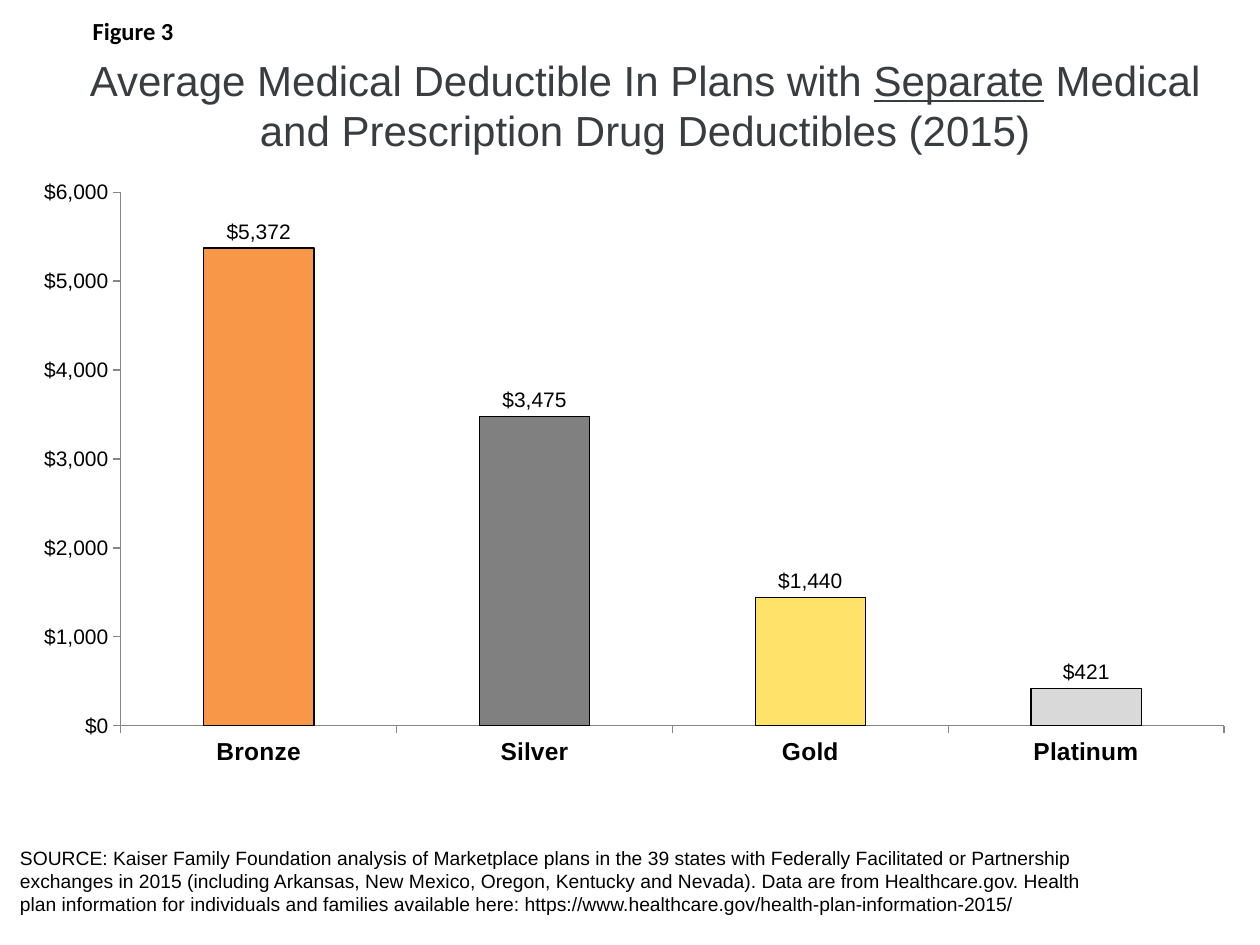
from dataclasses import dataclass

import pptx
import pptx.chart.data
import pptx.dml.color
import pptx.enum.chart
import pptx.enum.text
import pptx.oxml
import pptx.oxml.ns
import pptx.util

Pt = pptx.util.Pt
RGB = pptx.dml.color.RGBColor
ALIGN = pptx.enum.text.PP_ALIGN
ANCHOR = pptx.enum.text.MSO_ANCHOR


@dataclass(frozen=True)
class Theme:
    font: str = "Arial"
    label_font: str = "Calibri"
    text: str = "000000"
    title: str = "393D40"
    axis: str = "868686"
    title_size: float = 24
    figure_size: float = 14
    category_size: float = 14
    value_size: float = 12
    source_size: float = 11


@dataclass(frozen=True)
class Box:
    left: float
    top: float
    width: float
    height: float

    def lengths(self) -> tuple:
        return Pt(self.left), Pt(self.top), Pt(self.width), Pt(self.height)


@dataclass(frozen=True)
class TextBlock:
    box: Box
    runs: tuple[tuple[str, bool], ...]  # text, underlined
    size: float
    color: str
    font: str
    bold: bool = False
    align: ALIGN = ALIGN.CENTER
    anchor: ANCHOR = ANCHOR.TOP


@dataclass(frozen=True)
class MetalTier:
    name: str
    deductible: int
    color: str


THEME = Theme()
DOLLARS = '"$"#,##0'

TIERS = (
    MetalTier("Bronze", 5372, "F79747"),
    MetalTier("Silver", 3475, "808080"),
    MetalTier("Gold", 1440, "FEE26A"),
    MetalTier("Platinum", 421, "D9D9D9"),
)

CHART_BOX = Box(13, 95.8, 700.5, 350.6)
PLOT_SHARES = {"x": 0.08, "y": 0.04, "w": 0.9, "h": 0.87}

TEXTS = (
    TextBlock(
        Box(4.3, 480.2, 632.2, 47.5),
        (("SOURCE: Kaiser Family Foundation analysis of Marketplace plans in the 39 states "
          "with Federally Facilitated or Partnership exchanges in 2015 (including Arkansas, "
          "New Mexico, Oregon, Kentucky and Nevada). Data are from Healthcare.gov. Health "
          "plan information for individuals and families available here: "
          "https://www.healthcare.gov/health-plan-information-2015/", False),),
        THEME.source_size, THEME.text, THEME.font, align=ALIGN.LEFT,
    ),
    TextBlock(
        Box(24.5, 23.8, 688.3, 72),
        (("Average Medical Deductible In Plans with ", False),
         ("Separate", True),
         (" Medical and Prescription Drug Deductibles (2015)", False)),
        THEME.title_size, THEME.title, THEME.font, anchor=ANCHOR.MIDDLE,
    ),
    TextBlock(
        Box(13, 5.8, 126, 24.5),
        (("Figure 3", False),),
        THEME.figure_size, THEME.text, THEME.label_font, bold=True,
    ),
)


def style_font(font, size: float, color: str, name: str, bold: bool = False) -> None:
    font.size = Pt(size)
    font.name = name
    font.bold = bold
    font.color.rgb = RGB.from_string(color)


def add_text(s, block: TextBlock) -> None:
    tf = s.shapes.add_textbox(*block.box.lengths()).text_frame
    tf.word_wrap = True
    tf.vertical_anchor = block.anchor
    p = tf.paragraphs[0]
    p.alignment = block.align
    style_font(p.font, block.size, block.color, block.font, block.bold)
    for text, underlined in block.runs:
        r = p.add_run()
        r.text = text
        if underlined:
            r.font.underline = True


def set_plot_layout(chart, shares: dict[str, float]) -> None:
    """Fix the inner plot area as shares of the chart's width and height."""
    plot_area = chart._chartSpace.chart.plotArea
    for old in plot_area.findall(pptx.oxml.ns.qn("c:layout")):
        plot_area.remove(old)
    values = "".join(f'<c:{k} val="{v}"/>' for k, v in shares.items())
    plot_area.insert(0, pptx.oxml.parse_xml(
        f'<c:layout {pptx.oxml.ns.nsdecls("c")}><c:manualLayout>'
        '<c:layoutTarget val="inner"/><c:xMode val="edge"/><c:yMode val="edge"/>'
        f"{values}</c:manualLayout></c:layout>"))


def style_axis(axis, size: float, bold: bool = False) -> None:
    axis.has_major_gridlines = False
    axis.major_tick_mark = pptx.enum.chart.XL_TICK_MARK.OUTSIDE
    axis.minor_tick_mark = pptx.enum.chart.XL_TICK_MARK.NONE
    axis.format.line.color.rgb = RGB.from_string(THEME.axis)
    axis.format.line.width = Pt(0.75)
    style_font(axis.tick_labels.font, size, THEME.text, THEME.font, bold)


def add_deductible_chart(s, box: Box, tiers: tuple[MetalTier, ...]) -> None:
    data = pptx.chart.data.CategoryChartData()
    data.categories = [t.name for t in tiers]
    data.add_series("Series 1", [t.deductible for t in tiers])
    chart = s.shapes.add_chart(
        pptx.enum.chart.XL_CHART_TYPE.COLUMN_CLUSTERED, *box.lengths(), data).chart
    chart.has_legend = False
    chart.has_title = False
    style_font(chart.font, THEME.value_size, THEME.text, THEME.font)
    set_plot_layout(chart, PLOT_SHARES)

    style_axis(chart.category_axis, THEME.category_size, bold=True)
    axis = chart.value_axis
    style_axis(axis, THEME.value_size)
    axis.minimum_scale, axis.maximum_scale, axis.major_unit = 0, 6000, 1000
    axis.tick_labels.number_format = DOLLARS
    axis.tick_labels.number_format_is_linked = False

    plot = chart.plots[0]
    plot.gap_width = 150
    plot.vary_by_categories = False
    series = plot.series[0]
    for i, tier in enumerate(tiers):
        fmt = series.points[i].format
        fmt.fill.solid()
        fmt.fill.fore_color.rgb = RGB.from_string(tier.color)
        fmt.line.color.rgb = RGB.from_string(THEME.text)
        fmt.line.width = Pt(0.75)

    labels = series.data_labels
    labels.show_value = True
    labels.position = pptx.enum.chart.XL_LABEL_POSITION.OUTSIDE_END
    labels.number_format = DOLLARS
    labels.number_format_is_linked = False
    style_font(labels.font, THEME.value_size, THEME.text, THEME.font)


def main() -> None:
    prs = pptx.Presentation()
    prs.slide_width, prs.slide_height = Pt(720), Pt(540)
    s = prs.slides.add_slide(prs.slide_layouts[6])
    add_deductible_chart(s, CHART_BOX, TIERS)
    for block in TEXTS:
        add_text(s, block)
    prs.save("out.pptx")


if __name__ == "__main__":
    main()
